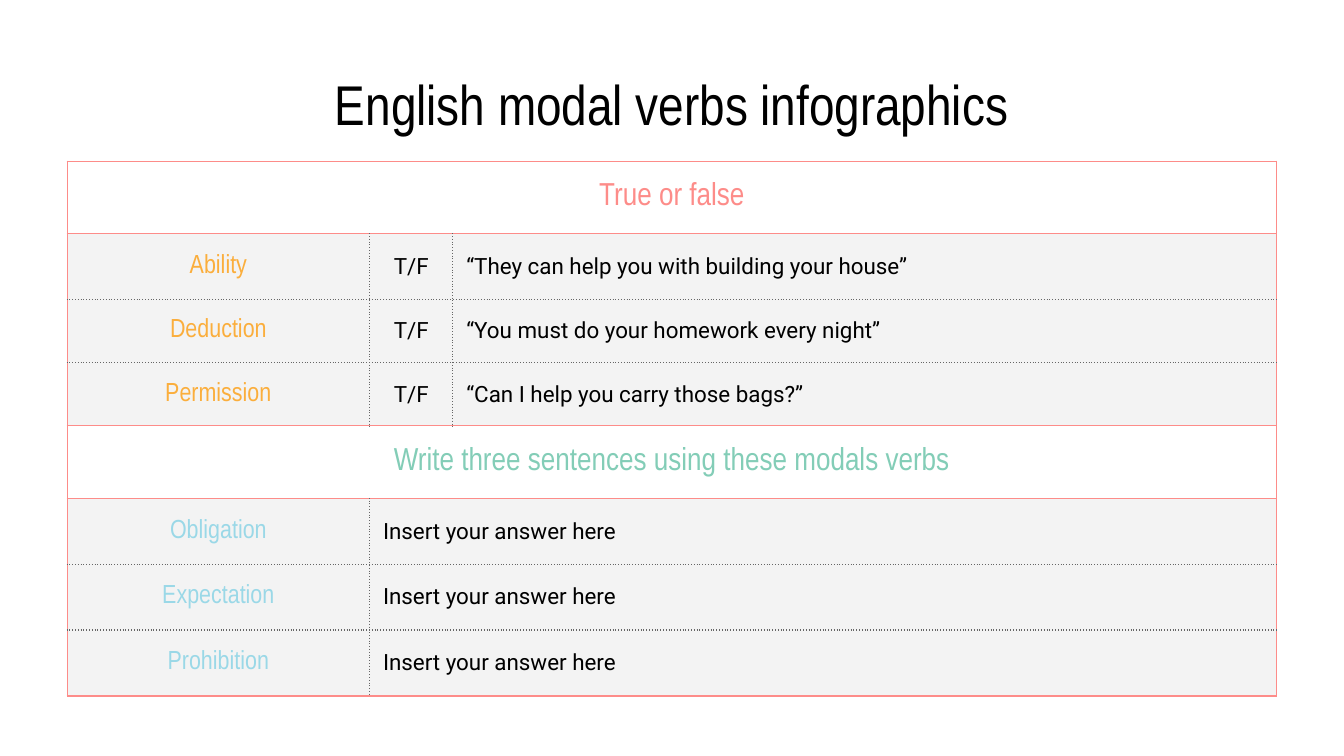
from dataclasses import dataclass

from lxml import etree
from pptx import Presentation
from pptx.dml.color import RGBColor
from pptx.enum import text
from pptx.oxml import ns
from pptx.util import Inches, Pt


@dataclass(frozen=True)
class Theme:
    heading_font: str = "Arial Narrow"
    body_font: str = "Roboto"
    black: str = "000000"
    coral: str = "FD8C89"
    orange: str = "FBAE3C"
    green: str = "83CDB7"
    blue: str = "9AD8E7"
    grey: str = "666666"
    pale: str = "F3F3F3"
    title_size: float = 30
    section_size: float = 17
    label_size: float = 14
    body_size: float = 12
    border: float = 0.75


THEME = Theme()
CENTER, LEFT = text.PP_ALIGN.CENTER, text.PP_ALIGN.LEFT
COLUMN_WIDTHS = (2.25, 0.62, 5.22, 0.91)
SECTION_HEIGHT = 0.54
ANSWER = "Insert your answer here"

# Section heading, its colour, label colour, row heights, rows
SECTIONS = (
    ("True or false", THEME.coral, THEME.orange, (0.49, 0.47, 0.47), (
        ("Ability", "T/F", "“They can help you with building your house”"),
        ("Deduction", "T/F", "“You must do your homework every night”"),
        ("Permission", "T/F", "“Can I help you carry those bags?”"),
    )),
    ("Write three sentences using these modals verbs", THEME.green, THEME.blue,
     (0.49, 0.49, 0.49), (
         ("Obligation", ANSWER),
         ("Expectation", ANSWER),
         ("Prohibition", ANSWER),
     )),
)


def add_run(paragraph, words, size, color, font, align):
    paragraph.alignment = align
    run = paragraph.add_run()
    run.text = words
    run.font.size = Pt(size)
    run.font.name = font
    run.font.color.rgb = RGBColor.from_string(color)


def add_title(slide, words):
    box = slide.shapes.add_textbox(Inches(0.5), Inches(0.45), Inches(9), Inches(0.63))
    frame = box.text_frame
    frame.word_wrap = True
    frame.vertical_anchor = text.MSO_ANCHOR.MIDDLE
    frame.margin_top = frame.margin_bottom = Inches(0.1)
    add_run(frame.paragraphs[0], words, THEME.title_size, THEME.black,
            THEME.heading_font, CENTER)


def set_borders(cell, solid_sides):
    """Draw solid coral lines on the given sides and dotted grey on the others."""
    properties = cell._tc.get_or_add_tcPr()
    for side in "LRTB":
        solid = side in solid_sides
        line = etree.SubElement(properties, ns.qn(f"a:ln{side}"), w=str(Pt(THEME.border)))
        fill = etree.SubElement(line, ns.qn("a:solidFill"))
        etree.SubElement(fill, ns.qn("a:srgbClr"), val=THEME.coral if solid else THEME.grey)
        etree.SubElement(line, ns.qn("a:prstDash"), val="solid" if solid else "dot")


def fill_cell(table, row, first, last, words, style, solid_sides, background=None):
    """Merge columns first to last of a row, then format and write the cell."""
    cell = table.cell(row, first)
    if last > first:
        cell.merge(table.cell(row, last))
    for column in range(first, last + 1):
        part = table.cell(row, column)
        set_borders(part, solid_sides)
        if background:
            part.fill.solid()
            part.fill.fore_color.rgb = RGBColor.from_string(background)
        else:
            part.fill.background()
    cell.vertical_anchor = text.MSO_ANCHOR.MIDDLE
    cell.margin_left = cell.margin_right = Inches(0.1)
    cell.margin_top = cell.margin_bottom = 0
    add_run(cell.text_frame.paragraphs[0], words, *style)


def fill_row(table, row, entries, label_color, horizontal_sides):
    """Write a label and its entries; the last entry spans the remaining columns."""
    final = len(entries) - 1
    for column, words in enumerate(entries):
        sides = horizontal_sides
        last = column
        if column == 0:
            style = (THEME.label_size, label_color, THEME.heading_font, CENTER)
            sides += "L"
        else:
            align = LEFT if column == final else CENTER
            style = (THEME.body_size, THEME.black, THEME.body_font, align)
        if column == final:
            last = len(COLUMN_WIDTHS) - 1
            sides += "R"
        fill_cell(table, row, column, last, words, style, sides, THEME.pale)


def add_exercise_table(slide):
    heights = [height for section in SECTIONS for height in (SECTION_HEIGHT, *section[3])]
    frame = slide.shapes.add_table(
        len(heights), len(COLUMN_WIDTHS), Inches(0.5), Inches(1.2),
        Inches(sum(COLUMN_WIDTHS)), Inches(sum(heights)))
    table = frame.table
    table.first_row = table.horz_banding = False
    for column, width in zip(table.columns, COLUMN_WIDTHS):
        column.width = Inches(width)
    for row, height in zip(table.rows, heights):
        row.height = Inches(height)

    row = 0
    for heading, heading_color, label_color, _, entries in SECTIONS:
        style = (THEME.section_size, heading_color, THEME.heading_font, CENTER)
        fill_cell(table, row, 0, len(COLUMN_WIDTHS) - 1, heading, style, "LRTB")
        for index, entry in enumerate(entries):
            sides = ("T" if index == 0 else "") + ("B" if index == len(entries) - 1 else "")
            fill_row(table, row + 1 + index, entry, label_color, sides)
        row += 1 + len(entries)


def main():
    presentation = Presentation()
    presentation.slide_width = Inches(10)
    presentation.slide_height = Inches(10) * 9 // 16
    slide = presentation.slides.add_slide(presentation.slide_layouts[6])
    add_title(slide, "English modal verbs infographics")
    add_exercise_table(slide)
    presentation.save("out.pptx")


if __name__ == "__main__":
    main()
